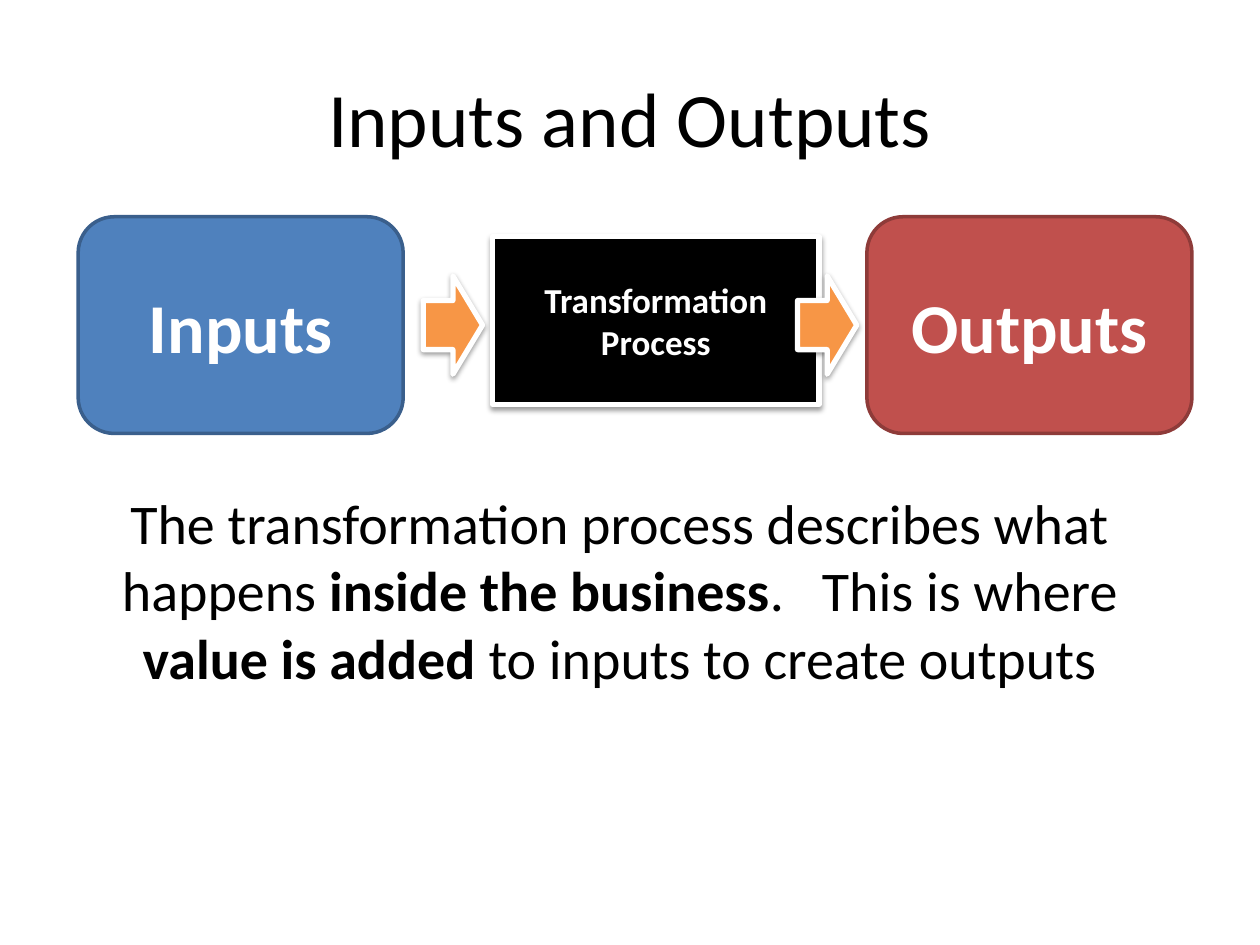
from dataclasses import dataclass

from lxml.etree import SubElement
from pptx import Presentation
from pptx.dml.color import RGBColor
from pptx.enum.shapes import MSO_SHAPE
from pptx.enum.text import MSO_ANCHOR, PP_ALIGN
from pptx.oxml.ns import qn
from pptx.util import Inches, Pt


@dataclass(frozen=True)
class Theme:
    """Colours, font and type sizes of the slide."""
    font: str = "Calibri"
    ink: str = "000000"
    paper: str = "FFFFFF"
    blue: str = "4F81BD"
    navy: str = "3A5F8C"
    red: str = "C0504D"
    wine: str = "8E3B39"
    orange: str = "F79646"
    title: int = 44
    card: int = 40
    body: int = 32
    label: int = 20


def write(shape, *lines, size, color, font, bold=False, anchor=MSO_ANCHOR.MIDDLE):
    """Fill a shape with centred lines, each a list of runs; odd runs flip the weight."""
    frame = shape.text_frame
    frame.word_wrap = True
    frame.vertical_anchor = anchor
    for row, line in enumerate(lines):
        para = frame.add_paragraph() if row else frame.paragraphs[0]
        para.alignment = PP_ALIGN.CENTER
        for spot, text in enumerate(line):
            run = para.add_run()
            run.text = text
            run.font.name = font
            run.font.size = Pt(size)
            run.font.bold = bold != bool(spot % 2)
            run.font.color.rgb = RGBColor.from_string(color)


class Deck:
    """Draws elements on one slide, on a grid of 100 columns and 75 rows."""

    def __init__(self, theme):
        """Open a blank slide."""
        self.theme = theme
        self.file = Presentation()
        self.file.slide_width, self.file.slide_height = Inches(10), Inches(7.5)
        self.unit = self.file.slide_width / 100
        self.slide = self.file.slides.add_slide(self.file.slide_layouts[6])

    def place(self, box):
        """Turn grid units into lengths."""
        return [round(part * self.unit) for part in box]

    def text(self, box, *lines, **style):
        """Add a text box."""
        area = self.slide.shapes.add_textbox(*self.place(box))
        write(area, *lines, color=self.theme.ink, font=self.theme.font, **style)

    def shape(self, kind, box, fill, edge, width):
        """Add a filled and outlined shape."""
        item = self.slide.shapes.add_shape(kind, *self.place(box))
        item.shadow.inherit = False
        item.fill.solid()
        item.fill.fore_color.rgb = RGBColor.from_string(fill)
        item.line.color.rgb = RGBColor.from_string(edge)
        item.line.width = Pt(width)
        return item

    def card(self, left, name, fill, edge):
        """Add a large rounded card."""
        item = self.shape(MSO_SHAPE.ROUNDED_RECTANGLE, (left, 17.2, 25.8, 17.2), fill, edge, 2)
        write(item, [name], size=self.theme.card, color=self.theme.paper,
              font=self.theme.font, bold=True)

    def raised(self, kind, box, fill):
        """Add a white-edged shape with a soft shadow below."""
        item = self.shape(kind, box, fill, self.theme.paper, 3)
        effects = item._element.spPr.find(qn("a:effectLst"))
        shade = SubElement(effects, qn("a:outerShdw"), blurRad=str(Pt(3.1)),
                           dist=str(Pt(1.6)), dir="5400000", rotWithShape="0")
        color = SubElement(shade, qn("a:srgbClr"), val=self.theme.ink)
        SubElement(color, qn("a:alpha"), val="38000")
        return item

    def process(self, box, *lines):
        """Add the dark process box."""
        item = self.raised(MSO_SHAPE.FLOWCHART_PROCESS, box, self.theme.ink)
        write(item, *lines, size=self.theme.label, color=self.theme.paper,
              font=self.theme.font, bold=True)

    def arrow(self, left):
        """Add a block arrow to the right."""
        self.raised(MSO_SHAPE.RIGHT_ARROW, (left, 21.9, 4.7, 7.8), self.theme.orange)


def main():
    """Build and save the slide."""
    theme = Theme()
    deck = Deck(theme)
    deck.text((5, 3, 90, 12.5), ["Inputs and Outputs"], size=theme.title)
    deck.card(6.2, "Inputs", theme.blue, theme.navy)
    deck.card(68.8, "Outputs", theme.red, theme.wine)
    deck.process((39.1, 18.8, 25.9, 13.3), ["Transformation"], ["Process"])
    deck.text((7, 38.3, 84.4, 22.6),
              ["The transformation process describes what happens ",
               "inside the business", ".   This is where ",
               "value is added ", "to inputs to create outputs"],
              size=theme.body, anchor=MSO_ANCHOR.TOP)
    for left in (33.6, 63.3):
        deck.arrow(left)
    deck.file.save("out.pptx")


if __name__ == "__main__":
    main()
